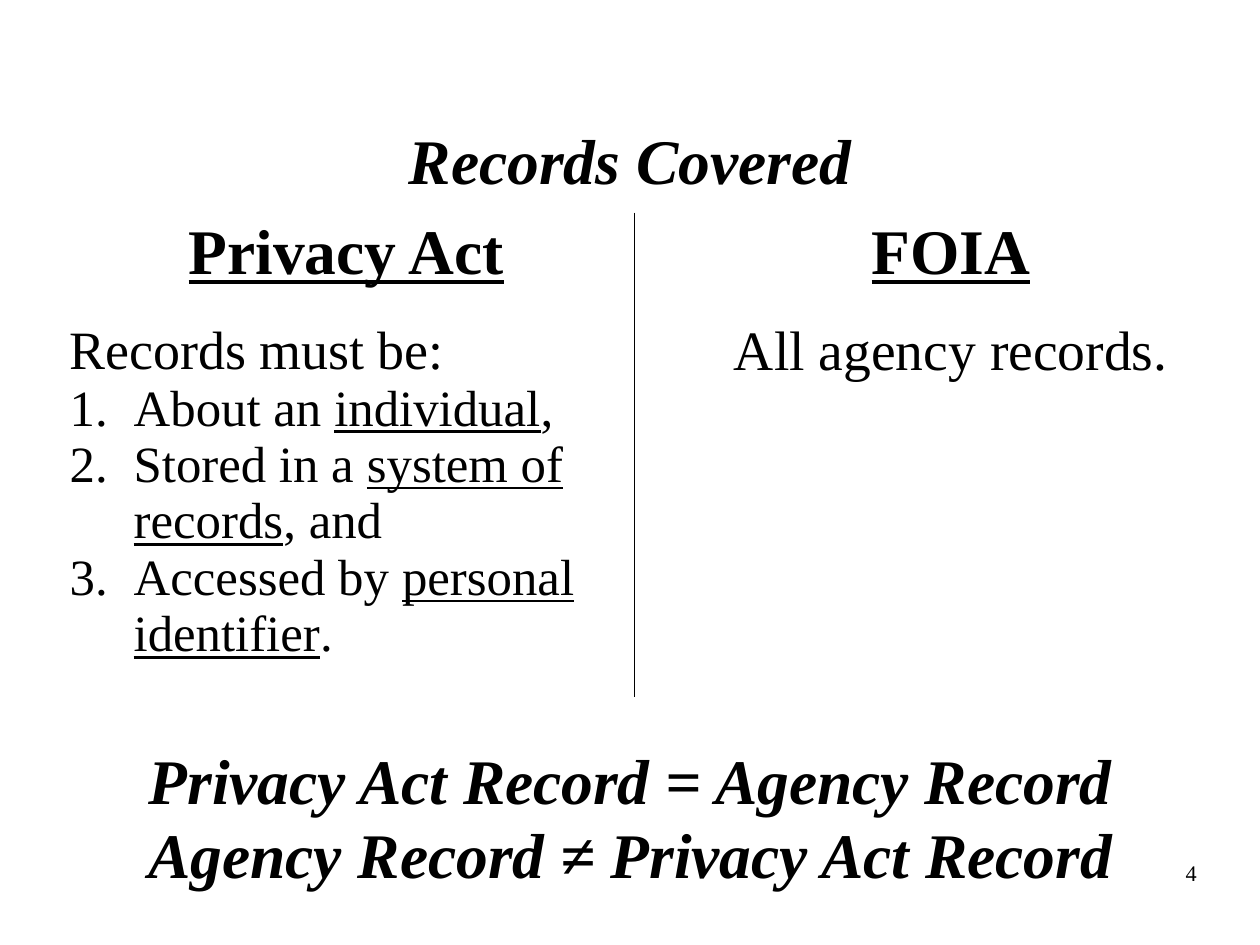
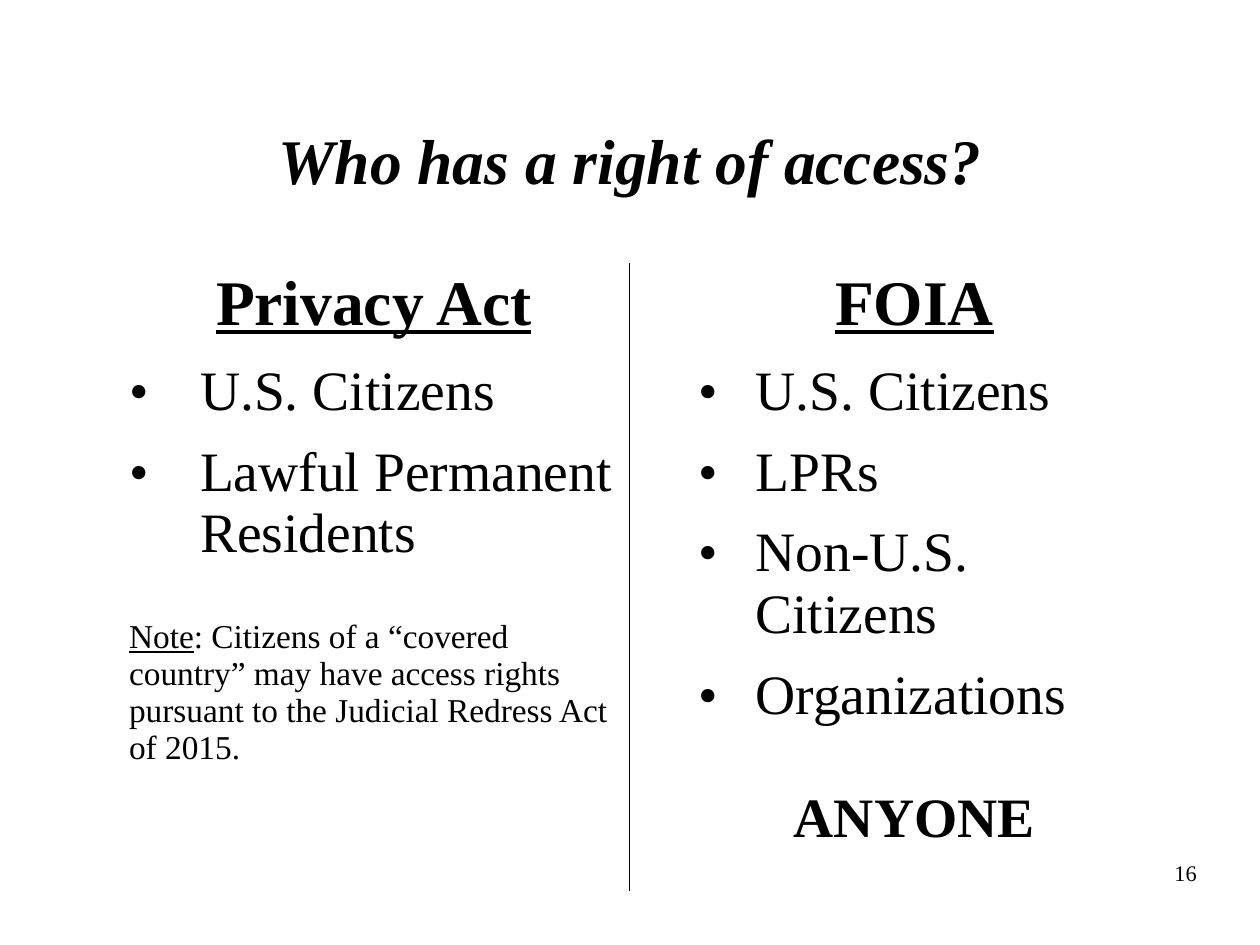
from dataclasses import dataclass

import lxml.etree
import pptx
import pptx.dml.color
import pptx.enum.text
import pptx.oxml.ns
import pptx.util

BLACK = pptx.dml.color.RGBColor(0, 0, 0)
WHITE = pptx.dml.color.RGBColor(255, 255, 255)
FONT = "Times New Roman"
WIDTH = pptx.util.Cm(28)
HEIGHT = pptx.util.Cm(21)
BANNER_SPACING = 0.96
HEADING_SIZE = 40
BODY_SIZE = 35
ITEM_SIZE = 32
PAGE_SIZE = 14
TITLE_BOX = (2, 12.7, 96, 9.07)
SUMMARY_BOX = (8.07, 78.4, 83.91, 16.81)
PAGE_BOX = (71.66, 90.9, 23.31, 6.89)
FOIA_INDENT = (7.35, -2.81)
LEFT = pptx.enum.text.PP_ALIGN.LEFT
CENTER = pptx.enum.text.PP_ALIGN.CENTER
RIGHT = pptx.enum.text.PP_ALIGN.RIGHT


@dataclass
class Para:
    runs: list
    size: float
    align: object = LEFT
    bold: bool = False
    italic: bool = False
    indent: tuple = (0, 0)
    bullet: str = ""
    before: float = 0
    after: float = 0
    spacing: float = 1.0


def across(percent):
    return pptx.util.Emu(round(WIDTH * percent / 100))


def down(percent):
    return pptx.util.Emu(round(HEIGHT * percent / 100))


def plain(text):
    return text, False


def underlined(text):
    return text, True


def add_child(parent, tag, **attrs):
    return lxml.etree.SubElement(parent, pptx.oxml.ns.qn(tag), attrs)


def set_bullet(pPr, bullet):
    if not bullet:
        add_child(pPr, "a:buNone")
        return
    add_child(pPr, "a:buFont", typeface=FONT)
    if bullet == "1.":
        add_child(pPr, "a:buAutoNum", type="arabicPeriod")
    else:
        add_child(pPr, "a:buChar", char=bullet)


def write_paras(tf, paras):
    tf.word_wrap = True
    for i, para in enumerate(paras):
        p = tf.add_paragraph() if i else tf.paragraphs[0]
        pPr = p._p.get_or_add_pPr()
        margin, first = para.indent
        pPr.set("marL", str(across(margin)))
        pPr.set("indent", str(across(first)))
        set_bullet(pPr, para.bullet)
        p.alignment = para.align
        p.line_spacing = para.spacing
        p.space_before = pptx.util.Pt(para.before)
        p.space_after = pptx.util.Pt(para.after)
        for text, underline in para.runs:
            r = p.add_run()
            r.text = text
            r.font.name = FONT
            r.font.size = pptx.util.Pt(para.size)
            r.font.bold = para.bold
            r.font.italic = para.italic
            r.font.underline = underline
            r.font.color.rgb = BLACK


def add_text(s, box, paras):
    x, y, w, h = box
    sp = s.shapes.add_textbox(across(x), down(y), across(w), down(h))
    write_paras(sp.text_frame, paras)
    return sp


def banner(text):
    return Para([plain(text)], HEADING_SIZE, CENTER, bold=True, italic=True, spacing=BANNER_SPACING)


def heading(text, indent=(0, 0)):
    return Para([underlined(text)], HEADING_SIZE, CENTER, bold=True, indent=indent)


def add_slide(prs, title, page):
    s = prs.slides.add_slide(prs.slide_layouts[6])
    s.background.fill.solid()
    s.background.fill.fore_color.rgb = WHITE
    add_text(s, TITLE_BOX, [banner(title)])
    tf = add_text(s, PAGE_BOX, [Para([plain(page)], PAGE_SIZE, RIGHT)]).text_frame
    tf.margin_left = tf.margin_top = tf.margin_right = tf.margin_bottom = 0
    return s


def set_borders(cell, divider):
    tcPr = cell._tc.get_or_add_tcPr()
    for i, side in enumerate(("a:lnL", "a:lnR", "a:lnT", "a:lnB")):
        ln = lxml.etree.Element(pptx.oxml.ns.qn(side), w=str(pptx.util.Pt(1)))
        if side == divider:
            add_child(add_child(ln, "a:solidFill"), "a:srgbClr", val=str(BLACK))
        else:
            add_child(ln, "a:noFill")
        tcPr.insert(i, ln)


def add_comparison(s, x, y, w, row_heights, privacy, foia):
    frame = s.shapes.add_table(2, 2, across(x), down(y), across(w), down(sum(row_heights)))
    table = frame.table
    table.first_row = table.horz_banding = False
    for row, height in zip(table.rows, row_heights):
        row.height = down(height)
    columns = (
        ("a:lnR", [heading("Privacy Act")], privacy),
        ("a:lnL", [heading("FOIA", FOIA_INDENT)], foia),
    )
    for col, (divider, *contents) in enumerate(columns):
        for row, paras in enumerate(contents):
            cell = table.cell(row, col)
            cell.fill.solid()
            cell.fill.fore_color.rgb = WHITE
            set_borders(cell, divider)
            write_paras(cell.text_frame, paras)


def requirement(lead, term, end):
    runs = [plain(lead), underlined(term), plain(end)]
    return Para(runs, ITEM_SIZE, indent=(5.08, -5.08), bullet="1.")


def holders(names, indent):
    return [Para([plain(name)], BODY_SIZE, indent=indent, bullet="•", after=12) for name in names]


def build_records(prs):
    s = add_slide(prs, "Records Covered", "4")
    privacy = [
        Para([plain("Records must be:")], 34),
        requirement("About an ", "individual", ","),
        requirement("Stored in a ", "system of records", ", and"),
        requirement("Accessed by ", "personal identifier", "."),
    ]
    foia = [Para([plain("All agency records.")], BODY_SIZE, CENTER, indent=FOIA_INDENT)]
    add_comparison(s, 4.63, 22.5, 91.44, (10.88, 40.15), privacy, foia)
    add_text(s, SUMMARY_BOX, [
        banner("Privacy Act Record = Agency Record"),
        banner("Agency Record ≠ Privacy Act Record"),
    ])


def build_access(prs):
    s = add_slide(prs, "Who has a right of access?", "16")
    note = [
        underlined("Note"),
        plain(": Citizens of a “covered country” may have access rights "
              "pursuant to the Judicial Redress Act of 2015."),
    ]
    privacy = holders(["U.S. Citizens", "Lawful Permanent Residents"], (5.63, -5.63))
    privacy.append(Para(note, 21, before=22))
    foia = holders(["U.S. Citizens", "LPRs", "Non-U.S. Citizens", "Organizations"], (9.07, -4.54))
    foia.append(Para([plain("ANYONE")], BODY_SIZE, CENTER, bold=True, indent=(4.54, 0), before=27))
    add_comparison(s, 9.34, 27.82, 81.28, (9.8, 56.72), privacy, foia)


def main():
    prs = pptx.Presentation()
    prs.slide_width = WIDTH
    prs.slide_height = HEIGHT
    build_records(prs)
    build_access(prs)
    prs.save("out.pptx")


if __name__ == "__main__":
    main()
